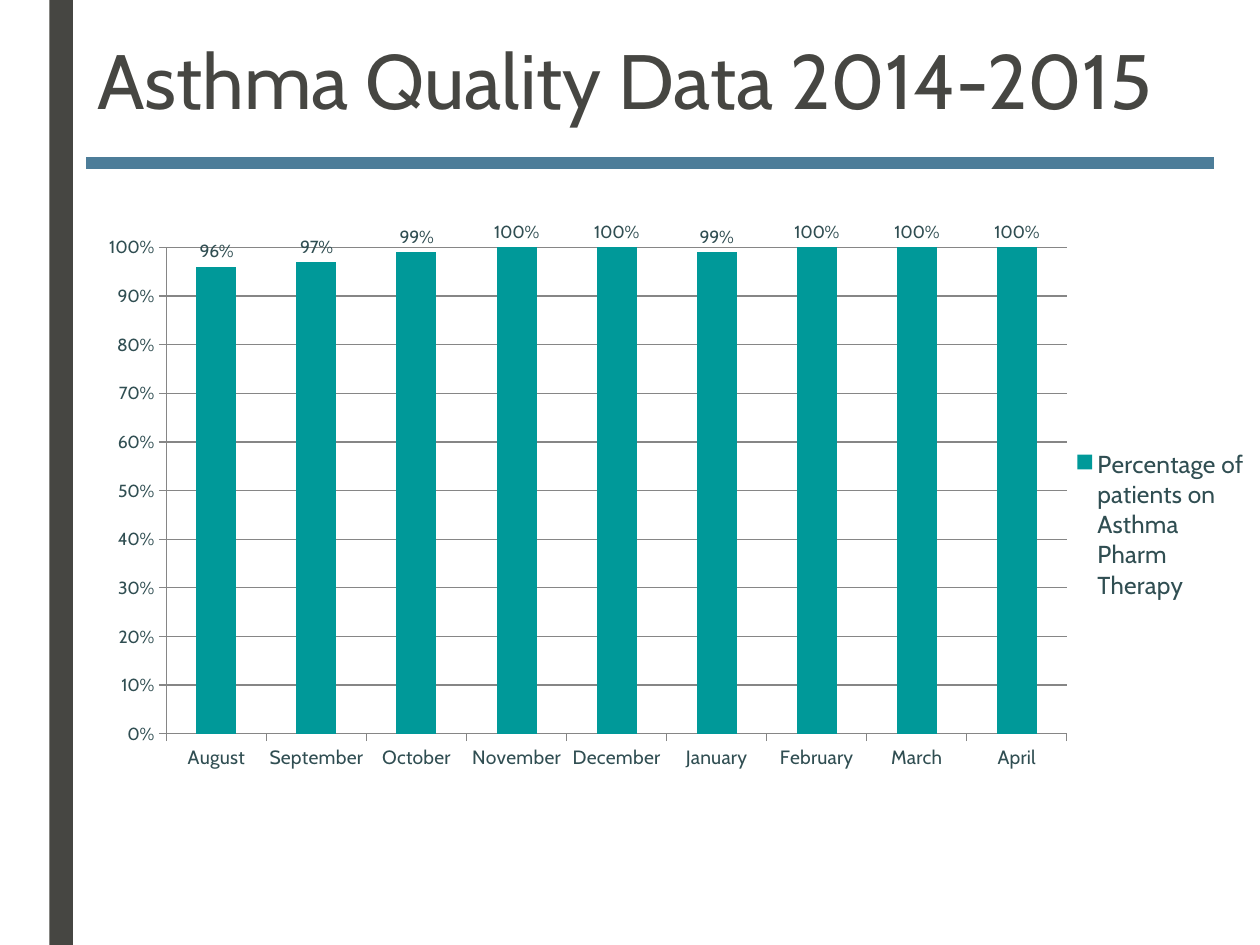
from dataclasses import dataclass

from lxml import etree
from pptx import Presentation
from pptx.chart.data import CategoryChartData
from pptx.dml.color import RGBColor
from pptx.enum.chart import XL_CHART_TYPE as ChartType
from pptx.enum.chart import XL_LABEL_POSITION as LabelPosition
from pptx.enum.chart import XL_LEGEND_POSITION as LegendPosition
from pptx.enum.chart import XL_TICK_MARK as TickMark
from pptx.enum.shapes import MSO_SHAPE as Shape
from pptx.enum.text import MSO_ANCHOR as Anchor
from pptx.enum.text import PP_ALIGN as Align
from pptx.oxml.ns import qn
from pptx.util import Pt


@dataclass(frozen=True)
class Theme:
    font: str = "Cabin"
    dark: RGBColor = RGBColor(0x46, 0x46, 0x42)
    rule: RGBColor = RGBColor(0x4D, 0x7D, 0x99)
    text: RGBColor = RGBColor(0x30, 0x4E, 0x52)
    column: RGBColor = RGBColor(0x00, 0x99, 0x99)
    grid: RGBColor = RGBColor(0x86, 0x86, 0x86)
    title_size: int = 44
    legend_size: int = 14
    category_size: int = 11
    chart_size: int = 10


THEME = Theme()
SERIES = "Percentage of patients on Asthma Pharm Therapy"
RATES = {
    "August": 0.96, "September": 0.97, "October": 0.99,
    "November": 1, "December": 1, "January": 0.99,
    "February": 1, "March": 1, "April": 1,
}


def place(shape, left, top, width, height):
    shape.left, shape.top = Pt(left), Pt(top)
    shape.width, shape.height = Pt(width), Pt(height)


def style_font(font, size, color):
    font.name = THEME.font
    font.size = Pt(size)
    font.bold = False
    font.color.rgb = color


def add_block(page, kind, bounds, color):
    block = page.shapes.add_shape(kind, *map(Pt, bounds))
    block.shadow.inherit = False
    block.fill.solid()
    block.fill.fore_color.rgb = color
    block.line.fill.background()


def set_title(page, words):
    title = page.shapes.title
    place(title, 48.25, 21.6, 635.75, 90)
    frame = title.text_frame
    frame.text = words
    frame.word_wrap = True
    frame.vertical_anchor = Anchor.TOP
    para = frame.paragraphs[0]
    para.alignment = Align.LEFT
    para.line_spacing = 0.89
    style_font(para.runs[0].font, THEME.title_size, THEME.dark)


def set_layout(element, x, y, w, h, inner=False):
    """Fix the place of a plot area or legend, in fractions of the chart."""
    for old in element.findall(qn("c:layout")):
        element.remove(old)
    layout = etree.Element(qn("c:layout"))
    manual = etree.SubElement(layout, qn("c:manualLayout"))
    settings = [("layoutTarget", "inner")] if inner else []
    settings += [("xMode", "edge"), ("yMode", "edge")]
    settings += [("x", x), ("y", y), ("w", w), ("h", h)]
    for name, value in settings:
        etree.SubElement(manual, qn(f"c:{name}")).set("val", str(value))
    position = element.find(qn("c:legendPos"))
    element.insert(0 if position is None else 1, layout)


def style_axes(chart):
    for axis in (chart.category_axis, chart.value_axis):
        axis.major_tick_mark = TickMark.OUTSIDE
        axis.minor_tick_mark = TickMark.NONE
        axis.format.line.color.rgb = THEME.grid
        axis.format.line.width = Pt(0.75)
    style_font(chart.category_axis.tick_labels.font, THEME.category_size, THEME.text)
    values = chart.value_axis
    values.minimum_scale, values.maximum_scale = 0, 1
    values.major_unit = 0.1
    values.has_major_gridlines = True
    values.major_gridlines.format.line.color.rgb = THEME.grid
    values.major_gridlines.format.line.width = Pt(0.75)
    values.tick_labels.number_format = "0%"
    values.tick_labels.number_format_is_linked = False


def style_columns(plot):
    plot.gap_width = 150
    plot.vary_by_categories = False
    fill = plot.series[0].format.fill
    fill.solid()
    fill.fore_color.rgb = THEME.column
    plot.has_data_labels = True
    labels = plot.data_labels
    labels.show_value = True
    labels.number_format = "0%"
    labels.number_format_is_linked = False
    labels.position = LabelPosition.OUTSIDE_END
    style_font(labels.font, THEME.chart_size, THEME.text)


def style_legend(chart):
    chart.has_legend = True
    legend = chart.legend
    legend.position = LegendPosition.RIGHT
    legend.include_in_layout = False
    style_font(legend.font, THEME.legend_size, THEME.text)
    set_layout(legend._element, 0.86, 0.32, 0.14, 0.27)


def add_rate_chart(page):
    data = CategoryChartData(number_format="0%")
    data.categories = list(RATES)
    data.add_series(SERIES, list(RATES.values()))
    bounds = map(Pt, (30.25, 120, 689.75, 396))
    chart = page.shapes.add_chart(ChartType.COLUMN_CLUSTERED, *bounds, data).chart
    chart.has_title = False
    style_font(chart.font, THEME.chart_size, THEME.text)
    style_axes(chart)
    style_columns(chart.plots[0])
    style_legend(chart)
    plot_area = chart._chartSpace.chart.plotArea
    set_layout(plot_area, 0.094, 0.054, 0.746, 0.702, inner=True)


def main():
    deck = Presentation()
    deck.slide_width, deck.slide_height = Pt(720), Pt(540)
    page = deck.slides.add_slide(deck.slide_layouts[5])
    add_block(page, Shape.RECTANGLE, (28.25, 0, 13.5, 540), THEME.dark)
    set_title(page, "Asthma Quality Data 2014-2015")
    add_rate_chart(page)
    add_block(page, Shape.MATH_MINUS, (-67, 78, 877, 30), THEME.rule)
    deck.save("out.pptx")


if __name__ == "__main__":
    main()
